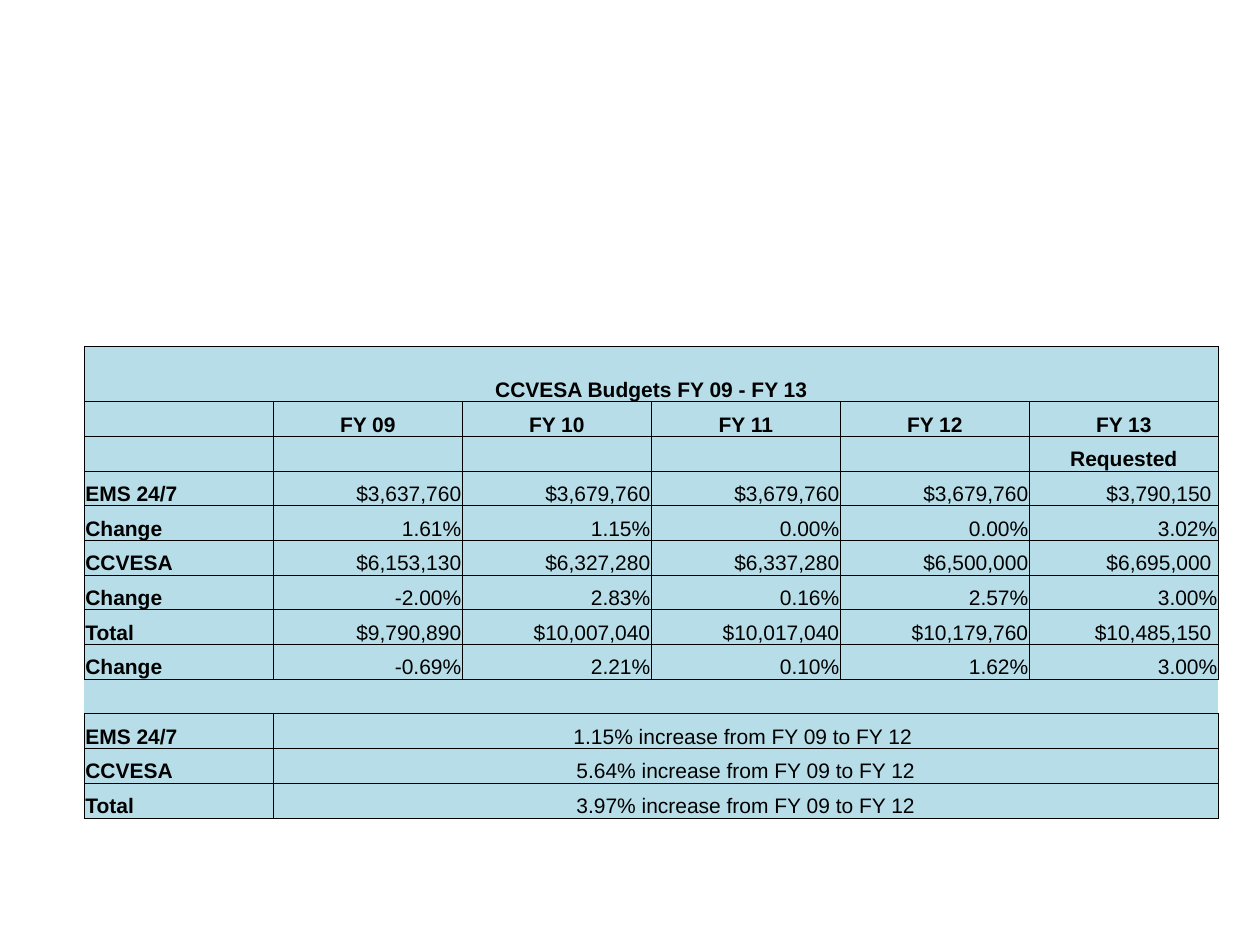
from dataclasses import dataclass

from pptx import Presentation
from pptx.dml.color import RGBColor
from pptx.enum.text import MSO_ANCHOR, PP_ALIGN
from pptx.oxml.ns import qn
from pptx.util import Cm, Pt
from lxml import etree

LEFT, MID, RIGHT = PP_ALIGN.LEFT, PP_ALIGN.CENTER, PP_ALIGN.RIGHT
BOTTOM = MSO_ANCHOR.BOTTOM


@dataclass(frozen=True)
class Theme:
    font: str = "Arial"
    size: float = 12
    ink: str = "000000"
    fill: str = "B7DEE8"
    rule: float = 0.5


THEME = Theme()
COLS = 6
TITLE = "CCVESA Budgets FY 09 - FY 13"
HEADS = [
    ["", "FY 09", "FY 10", "FY 11", "FY 12", "FY 13"],
    ["", "", "", "", "", "Requested"],
]
BUDGET = [
    ["EMS 24/7", "$3,637,760", "$3,679,760", "$3,679,760", "$3,679,760", "$3,790,150 "],
    ["Change", "1.61%", "1.15%", "0.00%", "0.00%", "3.02%"],
    ["CCVESA", "$6,153,130", "$6,327,280", "$6,337,280", "$6,500,000", "$6,695,000 "],
    ["Change", "-2.00%", "2.83%", "0.16%", "2.57%", "3.00%"],
    ["Total", "$9,790,890", "$10,007,040", "$10,017,040", "$10,179,760", "$10,485,150 "],
    ["Change", "-0.69%", "2.21%", "0.10%", "1.62%", "3.00%"],
]
GROWTH = [
    ["EMS 24/7", "1.15% increase from FY 09 to FY 12 "],
    ["CCVESA", "5.64% increase from FY 09 to FY 12"],
    ["Total", "3.97% increase from FY 09 to FY 12"],
]


def put(cell, text, *, bold=False, align=LEFT):
    para = cell.text_frame.paragraphs[0]
    para.alignment = align
    if not text:
        # An empty cell needs its own type size, or its row grows.
        end = etree.SubElement(para._p, qn("a:endParaRPr"))
        end.set("sz", str(int(THEME.size * 100)))
        return
    run = para.add_run()
    run.text = text
    font = run.font
    font.name, font.size, font.bold = THEME.font, Pt(THEME.size), bold
    font.color.rgb = RGBColor.from_string(THEME.ink)


def edge(cell, sides):
    """Rule the given sides (of L, R, T, B) and clear the others."""
    props = cell._tc.get_or_add_tcPr()
    for spot, side in enumerate("LRTB"):
        line = etree.Element(qn(f"a:ln{side}"), w=str(Pt(THEME.rule)))
        if side in sides:
            paint = etree.SubElement(line, qn("a:solidFill"))
            etree.SubElement(paint, qn("a:srgbClr"), val=THEME.ink)
        else:
            etree.SubElement(line, qn("a:noFill"))
        props.insert(spot, line)


def dress(cell, sides="LRTB"):
    cell.margin_left = cell.margin_right = cell.margin_top = Cm(0.02)
    cell.margin_bottom = 0
    cell.vertical_anchor = BOTTOM
    cell.fill.solid()
    cell.fill.fore_color.rgb = RGBColor.from_string(THEME.fill)
    edge(cell, sides)


def add_grid(slide, rows):
    frame = slide.shapes.add_table(
        rows, COLS, Cm(1.7), Cm(6.98), Cm(22.86), Cm(9.52))
    grid = frame.table
    grid.first_row = grid.horz_banding = False
    for col in grid.columns:
        col.width = Cm(3.81)
    for row in grid.rows:
        row.height = Cm(0.7)
    grid.rows[0].height = Cm(1.12)
    return grid


def fill_row(grid, row, texts, *, head=False):
    """Write a row; its last text spans the columns left over."""
    last = len(texts) - 1
    if last < COLS - 1:
        grid.cell(row, last).merge(grid.cell(row, COLS - 1))
    for col, text in enumerate(texts):
        wide = col == last and last < COLS - 1
        if head or wide:
            align = MID
        else:
            align = RIGHT if col else LEFT
        put(grid.cell(row, col), text, bold=head or col == 0, align=align)


def main():
    deck = Presentation()
    deck.slide_width, deck.slide_height = Cm(25.4), Cm(19.05)
    slide = deck.slides.add_slide(deck.slide_layouts[6])

    heads = [[TITLE], *HEADS]
    gap = [""] * COLS
    rows = [*heads, *BUDGET, gap, *GROWTH]
    grid = add_grid(slide, len(rows))
    for row, texts in enumerate(rows):
        fill_row(grid, row, texts, head=row < len(heads))
        for col in range(COLS):
            dress(grid.cell(row, col), "TB" if texts is gap else "LRTB")
    deck.save("out.pptx")


if __name__ == "__main__":
    main()
